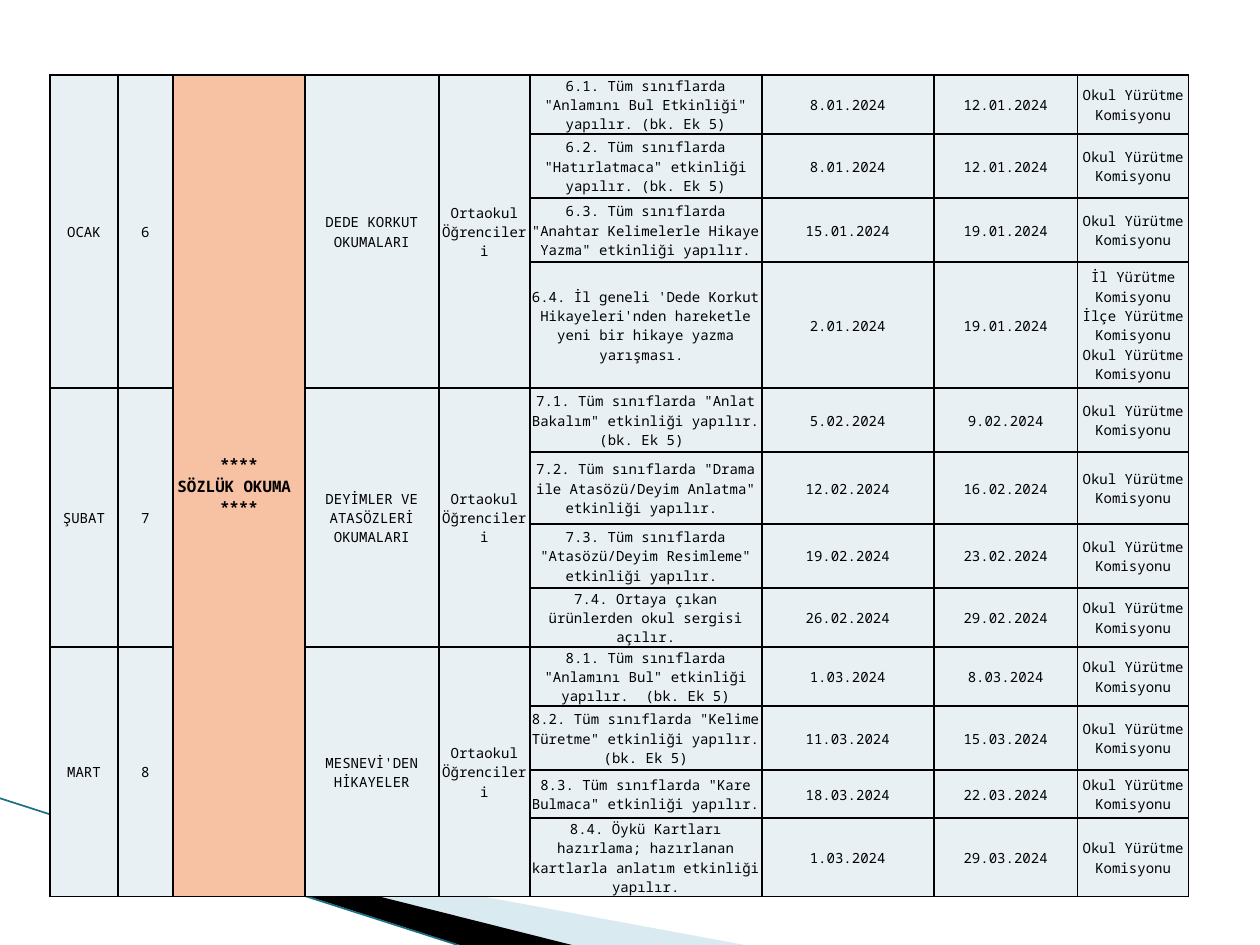
from lxml import etree
from pptx import Presentation
from pptx import util as u
from pptx.dml.color import RGBColor
from pptx.enum import shapes, text
from pptx.oxml.ns import qn

SCALE = 914400 / 126
THEME = {
    "font": "Noto Sans Mono",
    "size": 8,
    "big": 9,
    "ink": "000000",
    "cell": "E8F0F4",
    "peach": "F7C1A4",
    "wing": "A0CBDC",
    "line": "1A6F85",
}
COLS = [68, 55, 132, 134, 91, 232, 172, 144, 111]
ROWS = [48, 64, 64, 126, 64, 72, 64, 49, 48, 64, 48, 64]
SPAN = 4
PUPILS = "Ortaokul Öğrencileri"
BOARD = "Okul Yürütme Komisyonu"
BOARDS = "İl Yürütme Komisyonu\nİlçe Yürütme Komisyonu\n" + BOARD
TITLE = "****\nSÖZLÜK OKUMA \n****"
MONTHS = [
    ("OCAK", "6", "DEDE KORKUT OKUMALARI", [
        ('6.1. Tüm sınıflarda "Anlamını Bul Etkinliği" yapılır. (bk. Ek 5)',
         "8.01.2024", "12.01.2024", BOARD),
        ('6.2. Tüm sınıflarda "Hatırlatmaca" etkinliği yapılır. (bk. Ek 5)',
         "8.01.2024", "12.01.2024", BOARD),
        ('6.3. Tüm sınıflarda "Anahtar Kelimelerle Hikaye Yazma" etkinliği yapılır.',
         "15.01.2024", "19.01.2024", BOARD),
        ("6.4. İl geneli 'Dede Korkut Hikayeleri'nden hareketle yeni bir hikaye "
         "yazma yarışması. ", "2.01.2024", "19.01.2024", BOARDS),
    ]),
    ("ŞUBAT", "7", "DEYİMLER VE ATASÖZLERİ OKUMALARI", [
        ('7.1. Tüm sınıflarda "Anlat Bakalım" etkinliği yapılır. (bk. Ek 5) ',
         "5.02.2024", "9.02.2024", BOARD),
        ('7.2. Tüm sınıflarda "Drama ile Atasözü/Deyim Anlatma" etkinliği yapılır. ',
         "12.02.2024", "16.02.2024", BOARD),
        ('7.3. Tüm sınıflarda "Atasözü/Deyim Resimleme" etkinliği yapılır. ',
         "19.02.2024", "23.02.2024", BOARD),
        ("7.4. Ortaya çıkan ürünlerden okul sergisi açılır.",
         "26.02.2024", "29.02.2024", BOARD),
    ]),
    ("MART", "8", "MESNEVİ'DEN HİKAYELER", [
        ('8.1. Tüm sınıflarda "Anlamını Bul" etkinliği yapılır.  (bk. Ek 5)',
         "1.03.2024", "8.03.2024", BOARD),
        ('8.2. Tüm sınıflarda "Kelime Türetme" etkinliği yapılır. (bk. Ek 5)',
         "11.03.2024", "15.03.2024", BOARD),
        ('8.3. Tüm sınıflarda "Kare Bulmaca" etkinliği yapılır. ',
         "18.03.2024", "22.03.2024", BOARD),
        ("8.4. Öykü Kartları hazırlama; hazırlanan kartlarla anlatım etkinliği yapılır.",
         "1.03.2024", "29.03.2024", BOARD),
    ]),
]


def px(n):
    return u.Emu(round(n * SCALE))


def tint(name):
    return RGBColor.from_string(THEME[name])


def apply(obj, **vals):
    for key, val in vals.items():
        setattr(obj, key, val)


def add_wing(slide, points, color, alpha=None):
    path = slide.shapes.build_freeform(*points[0], scale=SCALE)
    path.add_line_segments(points[1:], close=True)
    wing = path.convert_to_shape()
    wing.shadow.inherit = False
    wing.line.fill.background()
    wing.fill.solid()
    wing.fill.fore_color.rgb = tint(color)
    if alpha:
        tone = wing.fill._xPr.find(".//" + qn("a:srgbClr"))
        etree.SubElement(tone, qn("a:alpha"), val=str(alpha * 1000))


def add_line(slide, *ends):
    line = slide.shapes.add_connector(
        shapes.MSO_CONNECTOR.STRAIGHT, *map(px, ends))
    line.line.color.rgb = tint("line")
    line.line.width = u.Pt(0.95)
    etree.SubElement(line._element.spPr, qn("a:effectLst"))


def add_edges(cell):
    props = cell._tc.get_or_add_tcPr()
    for side in "LRTB":
        edge = etree.SubElement(props, qn("a:ln" + side), w=str(u.Pt(1)))
        fill = etree.SubElement(edge, qn("a:solidFill"))
        etree.SubElement(fill, qn("a:srgbClr"), val=THEME["ink"])


def style_cell(cell, color):
    add_edges(cell)
    cell.fill.solid()
    cell.fill.fore_color.rgb = tint(color)
    apply(cell, margin_left=px(1), margin_top=px(1), margin_right=px(1),
          margin_bottom=0, vertical_anchor=text.MSO_ANCHOR.MIDDLE)


def write(cell, words, size="size", bold=False):
    cell.text = words
    for para in cell.text_frame.paragraphs:
        para.alignment = text.PP_ALIGN.CENTER
        for run in para.runs:
            apply(run.font, name=THEME["font"], size=u.Pt(THEME[size]), bold=bold)
            run.font.color.rgb = tint("ink")


def add_grid(slide):
    frame = slide.shapes.add_table(
        len(ROWS), len(COLS), px(50), px(75), px(sum(COLS)), px(sum(ROWS)))
    grid = frame.table
    apply(grid, first_row=False, horz_banding=False)
    for col, wide in zip(grid.columns, COLS):
        col.width = px(wide)
    for row, high in zip(grid.rows, ROWS):
        row.height = px(high)
        for at, cell in enumerate(row.cells):
            style_cell(cell, "peach" if at == 2 else "cell")
    return grid


def fill_grid(grid):
    head = grid.cell(0, 2)
    head.merge(grid.cell(len(ROWS) - 1, 2))
    write(head, TITLE, "big", True)
    head._tc.get_or_add_tcPr().set("vert", "wordArtVert")
    for part, (month, num, topic, tasks) in enumerate(MONTHS):
        top = part * SPAN
        for col, words in zip((0, 1, 3, 4), (month, num, topic, PUPILS)):
            cell = grid.cell(top, col)
            cell.merge(grid.cell(top + SPAN - 1, col))
            write(cell, words)
        for row, task in enumerate(tasks, top):
            for col, words in enumerate(task, 5):
                write(grid.cell(row, col), words)


def main():
    deck = Presentation()
    apply(deck, slide_width=u.Inches(10), slide_height=u.Inches(7.5))
    slide = deck.slides.add_slide(deck.slide_layouts[6])
    add_wing(slide, [(69, 820), (750, 946), (575, 946), (69, 819)], "wing", 40)
    add_wing(slide, [(67, 818), (576, 946), (469, 948), (68, 819)], "ink")
    add_line(slide, -1, 798, 467, 948)
    fill_grid(add_grid(slide))
    deck.save("out.pptx")


if __name__ == "__main__":
    main()
